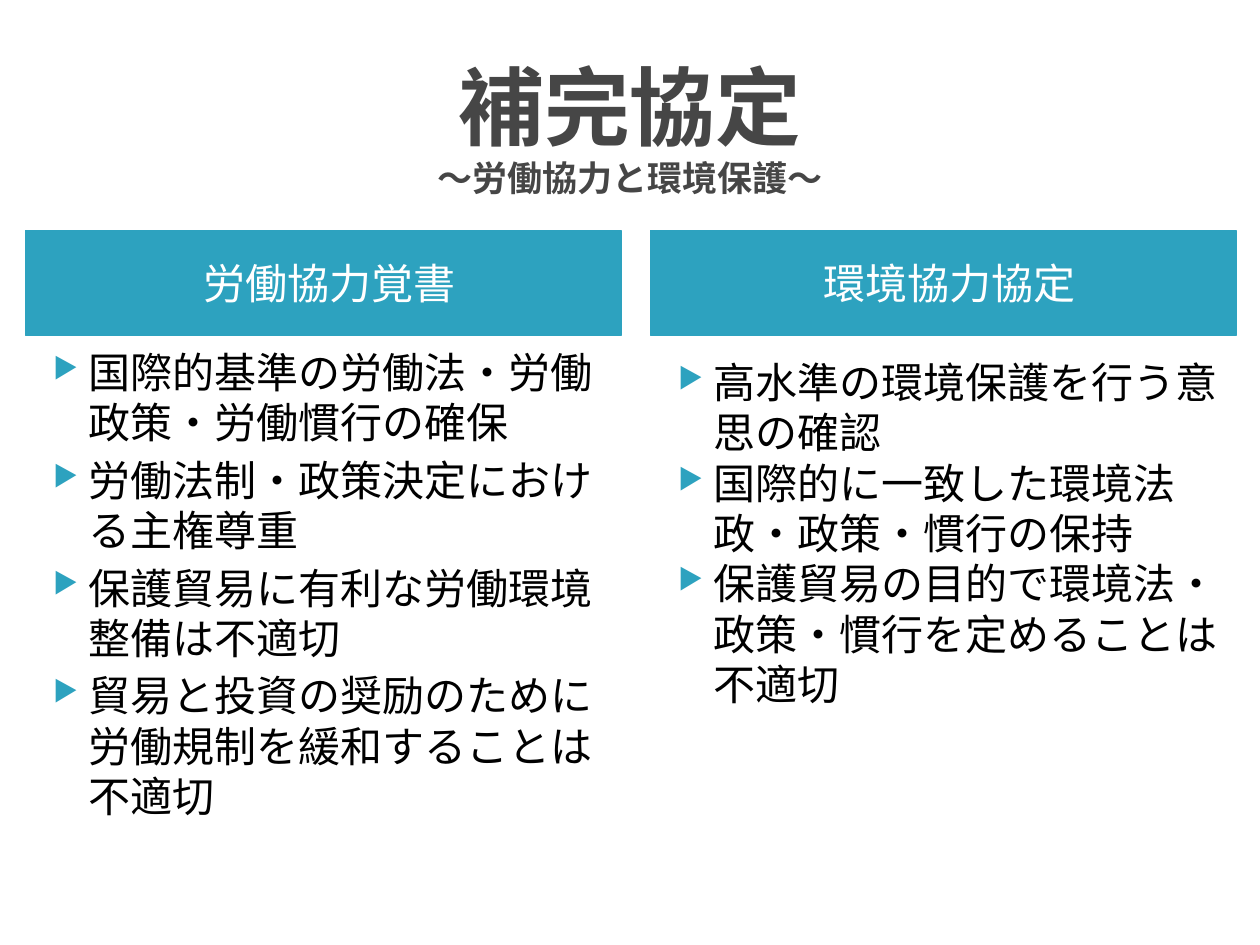
from dataclasses import dataclass

from lxml.etree import SubElement
from pptx import Presentation
from pptx.dml.color import RGBColor
from pptx.enum.shapes import MSO_SHAPE
from pptx.enum.text import MSO_ANCHOR, PP_ALIGN
from pptx.oxml.ns import qn
from pptx.util import Cm, Pt

COLORS = {"title": "464646", "accent": "2DA2BF", "header": "FFFFFF", "body": "000000"}
FONT_NAME = "Courier New"
HEADER_TOP, HEADER_HEIGHT = 4.65, 2.11
SLIDE_HEIGHT = 19.05


@dataclass
class Column:
    """One agreement; lengths in centimetres, item gap in points."""
    left: float
    width: float
    list_top: float
    item_gap: float
    heading: str
    items: list[str]


COLUMNS = [
    Column(0.51, 12.01, 6.86, 4, "労働協力覚書", [
        "国際的基準の労働法・労働政策・労働慣行の確保",
        "労働法制・政策決定における主権尊重",
        "保護貿易に有利な労働環境整備は不適切",
        "貿易と投資の奨励のために労働規制を緩和することは不適切",
    ]),
    Column(13.11, 11.81, 7.06, 0, "環境協力協定", [
        "高水準の環境保護を行う意思の確認",
        "国際的に一致した環境法政・政策・慣行の保持",
        "保護貿易の目的で環境法・政策・慣行を定めることは不適切",
    ]),
]


def set_attributes(target, values: dict) -> None:
    for name, value in values.items():
        setattr(target, name, value)


def add_run(paragraph, text: str, size: float, color: str, bold: bool = False) -> None:
    run = paragraph.add_run()
    run.text = text
    set_attributes(run.font, {"name": FONT_NAME, "size": Pt(size), "bold": bold})
    run.font.color.rgb = RGBColor.from_string(COLORS[color])


def add_bullet(paragraph) -> None:
    properties = paragraph._p.get_or_add_pPr()
    properties.set("marL", str(Cm(1.02)))
    properties.set("indent", str(Cm(-0.71)))
    bullet_color = SubElement(properties, qn("a:buClr"))
    SubElement(bullet_color, qn("a:srgbClr"), val=COLORS["accent"])
    SubElement(properties, qn("a:buSzPct"), val="68000")
    SubElement(properties, qn("a:buChar"), char="▶")


def format_title(title) -> None:
    set_attributes(title, {"left": Cm(1.27), "top": Cm(0.76),
                           "width": Cm(22.86), "height": Cm(3.56)})
    set_attributes(title.text_frame, {"vertical_anchor": MSO_ANCHOR.MIDDLE, "word_wrap": True})
    paragraph = title.text_frame.paragraphs[0]
    paragraph.alignment = PP_ALIGN.CENTER
    add_run(paragraph, "補完協定", 49, "title", bold=True)
    paragraph.add_line_break()
    add_run(paragraph, "～労働協力と環境保護～", 20, "title", bold=True)


def draw_header(slide, column: Column) -> None:
    shape = slide.shapes.add_shape(MSO_SHAPE.RECTANGLE, Cm(column.left), Cm(HEADER_TOP),
                                   Cm(column.width), Cm(HEADER_HEIGHT))
    shape.shadow.inherit = False
    accent = RGBColor.from_string(COLORS["accent"])
    shape.fill.solid()
    shape.fill.fore_color.rgb = accent
    shape.line.color.rgb = accent
    shape.line.width = Pt(0.75)
    set_attributes(shape.text_frame, {
        "margin_left": Cm(0.51), "margin_right": Cm(0.25),
        "margin_top": Cm(0.13), "margin_bottom": Cm(0.13),
        "vertical_anchor": MSO_ANCHOR.MIDDLE, "word_wrap": True})
    paragraph = shape.text_frame.paragraphs[0]
    paragraph.alignment = PP_ALIGN.CENTER
    add_run(paragraph, column.heading, 24, "header")


def draw_list(slide, column: Column) -> None:
    box = slide.shapes.add_textbox(Cm(column.left), Cm(column.list_top), Cm(column.width),
                                   Cm(SLIDE_HEIGHT - column.list_top))
    frame = box.text_frame
    frame.word_wrap = True
    for index, item in enumerate(column.items):
        paragraph = frame.add_paragraph() if index else frame.paragraphs[0]
        add_bullet(paragraph)
        paragraph.space_before = Pt(column.item_gap if index else 0)
        add_run(paragraph, item, 24, "body")


def main() -> None:
    presentation = Presentation()
    set_attributes(presentation, {"slide_width": Cm(25.4), "slide_height": Cm(SLIDE_HEIGHT)})
    slide = presentation.slides.add_slide(presentation.slide_layouts.get_by_name("Title Only"))
    format_title(slide.shapes.title)
    for column in COLUMNS:
        draw_header(slide, column)
        draw_list(slide, column)
    presentation.save("out.pptx")


if __name__ == "__main__":
    main()
